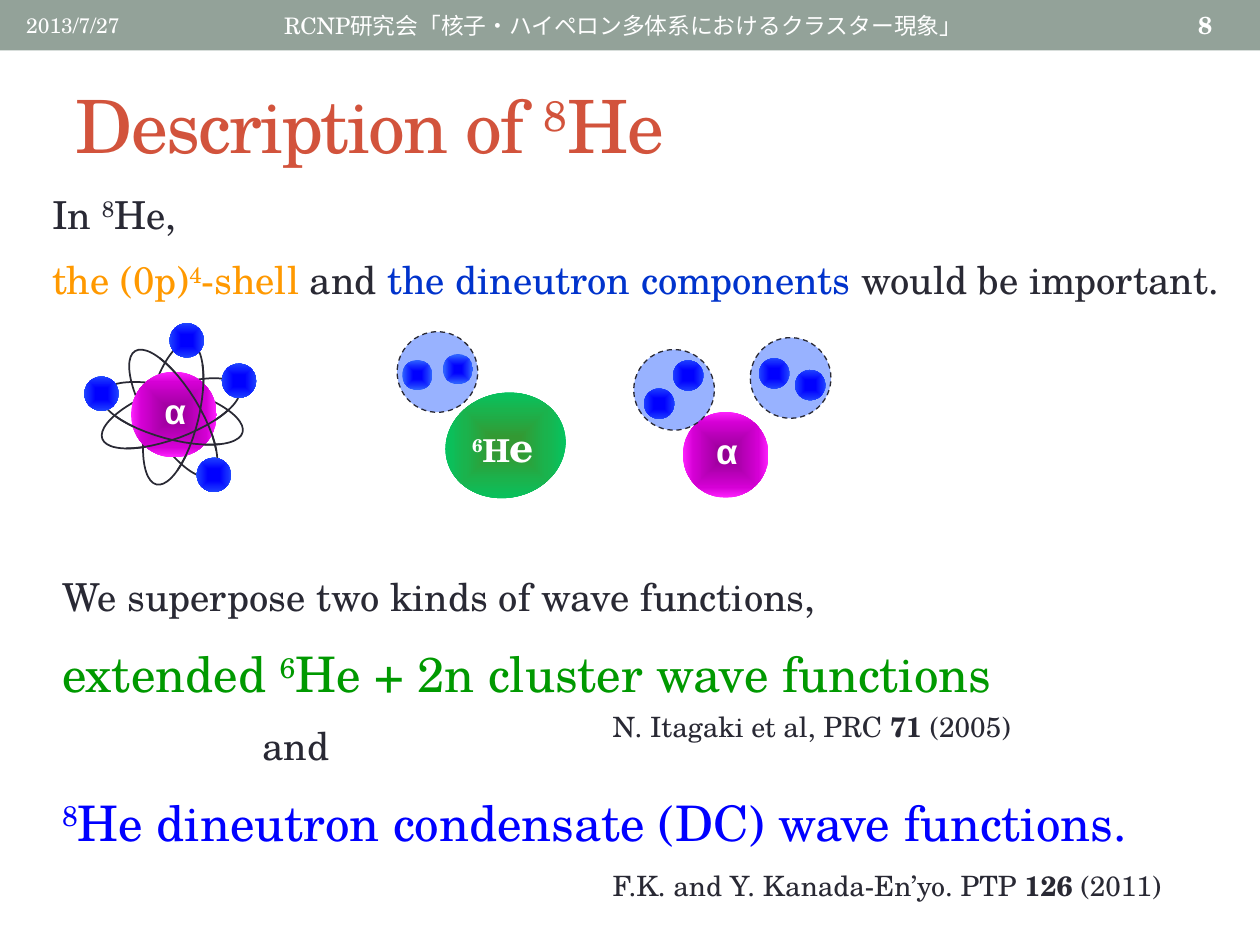
"""Build the slide on the description of helium-8."""
import math
from dataclasses import dataclass
from typing import NamedTuple, Optional

import pptx
import pptx.dml.color
import pptx.enum.dml
import pptx.enum.shapes
import pptx.enum.text
import pptx.oxml
import pptx.oxml.ns
import pptx.util
from lxml import etree

Pt = pptx.util.Pt
qn = pptx.oxml.ns.qn
INK, WHITE = "292934", "FFFFFF"
SERIF, SANS = "TeX Gyre Schola", "Arial"
NEUTRON_STOPS = ((25, "0000FF"), (59, "152DFF"), (91, "2D61FF"))
ALPHA_STOPS = ((0, "8F008F"), (76, "D500D5"), (100, "FF21FF"))
HELIUM6_STOPS = ((13, "339933"), (54, "1AB34D"), (92, "00C864"))
ORBIT_A, ORBIT_B = 14.75, 41.75
ARC_HALF_ANGLE, ARC_STEP = 48, 8


class Piece(NamedTuple):
    text: str
    color: Optional[str] = None
    raised: bool = False
    bold: bool = False
    size: Optional[float] = None


@dataclass
class Line:
    pieces: list[Piece]
    size: float = 22
    color: str = INK
    font: str = SERIF
    bold: bool = False
    indent: float = 0
    centered: bool = False
    spaced: bool = True
    tracking: float = 0


class Ball(NamedTuple):
    x: float
    y: float
    turn: float = 0


def rgb(code: str) -> pptx.dml.color.RGBColor:
    return pptx.dml.color.RGBColor.from_string(code)


def add_text(slide, left: float, top: float, width: float, height: float,
             lines: list[Line], middle: bool = False) -> None:
    frame = slide.shapes.add_textbox(Pt(left), Pt(top), Pt(width), Pt(height)).text_frame
    frame.word_wrap = True
    anchors = pptx.enum.text.MSO_ANCHOR
    frame.vertical_anchor = anchors.MIDDLE if middle else anchors.TOP
    for index, line in enumerate(lines):
        paragraph = frame.add_paragraph() if index else frame.paragraphs[0]
        paragraph.font.name = line.font
        paragraph.font.size = Pt(line.size)
        paragraph.font.bold = line.bold
        paragraph.font.color.rgb = rgb(line.color)
        if line.centered:
            paragraph.alignment = pptx.enum.text.PP_ALIGN.CENTER
        properties = paragraph._p.get_or_add_pPr()
        defaults = properties.find(qn("a:defRPr"))
        etree.SubElement(defaults, qn("a:ea")).set("typeface", line.font)
        if line.indent:
            properties.set("marL", str(int(Pt(line.indent))))
        if line.spaced:
            before = etree.Element(qn("a:spcBef"))
            etree.SubElement(before, qn("a:spcPct")).set("val", "50000")
            properties.insert(0, before)
        for piece in line.pieces:
            run = paragraph.add_run()
            run.text = piece.text
            if piece.color:
                run.font.color.rgb = rgb(piece.color)
            if piece.bold:
                run.font.bold = True
            if piece.size:
                run.font.size = Pt(piece.size)
            if piece.raised:
                run._r.get_or_add_rPr().set("baseline", "30000")
            if line.tracking:
                run._r.get_or_add_rPr().set("spc", str(int(line.tracking * 100)))


def add_ellipse(slide, ball: Ball, width: float, height: float):
    shape = slide.shapes.add_shape(
        pptx.enum.shapes.MSO_SHAPE.OVAL, Pt(ball.x - width / 2), Pt(ball.y - height / 2),
        Pt(width), Pt(height))
    shape.rotation = ball.turn
    shape.shadow.inherit = False
    shape.fill.background()
    shape.line.fill.background()
    return shape


def set_outline(shape, weight: float) -> None:
    shape.line.color.rgb = rgb(INK)
    shape.line.width = Pt(weight)


def add_glowing(slide, ball: Ball, width: float, height: float, stops) -> None:
    shape = add_ellipse(slide, ball, width, height)
    marks = "".join(f'<a:gs pos="{at * 1000}"><a:srgbClr val="{code}"/></a:gs>'
                    for at, code in stops)
    gradient = pptx.oxml.parse_xml(
        f'<a:gradFill {pptx.oxml.ns.nsdecls("a")} rotWithShape="1"><a:gsLst>{marks}</a:gsLst>'
        '<a:path path="shape"><a:fillToRect l="50000" t="50000" r="50000" b="50000"/>'
        '</a:path></a:gradFill>')
    properties = shape._element.spPr
    properties.replace(properties.find(qn("a:noFill")), gradient)


def add_neutrons(slide, balls: list[Ball], size: float) -> None:
    for ball in balls:
        add_glowing(slide, ball, size, size, NEUTRON_STOPS)


def add_alpha(slide, ball: Ball) -> None:
    add_glowing(slide, ball, 49, 49, ALPHA_STOPS)
    add_text(slide, ball.x - 12.6, ball.y - 18, 27.4, 31.7,
             [Line([Piece("α")], 20, WHITE, SANS, bold=True)])


def add_dineutron(slide, cloud: Ball, neutrons: list[Ball]) -> None:
    shape = add_ellipse(slide, cloud, 46.1, 46.1)
    shape.fill.solid()
    shape.fill.fore_color.rgb = rgb("3366FF")
    color = shape._element.spPr.find(qn("a:solidFill"))[0]
    etree.SubElement(color, qn("a:alpha")).set("val", "50000")
    set_outline(shape, 0.75)
    shape.line.dash_style = pptx.enum.dml.MSO_LINE.DASH
    add_neutrons(slide, neutrons, 17.3)


def add_front_arc(slide, orbit: Ball) -> None:
    edge = ORBIT_A * math.cos(math.radians(ARC_HALF_ANGLE))
    reach, turn = (ORBIT_A + edge) / 2, math.radians(orbit.turn)
    x = orbit.x + reach * math.cos(turn)
    y = orbit.y + reach * math.sin(turn)
    angles = [math.radians(a) for a in range(-ARC_HALF_ANGLE, ARC_HALF_ANGLE + 1, ARC_STEP)]
    points = [(Pt(x + ORBIT_A * math.cos(a) - reach), Pt(y + ORBIT_B * math.sin(a)))
              for a in angles]
    builder = slide.shapes.build_freeform(*points[0])
    builder.add_line_segments(points[1:], close=False)
    arc = builder.convert_to_shape()
    arc.rotation = orbit.turn
    arc.shadow.inherit = False
    arc.fill.background()
    set_outline(arc, 1)


def citation(authors: str, volume: str, year: str) -> list[Line]:
    return [Line([Piece(authors), Piece(volume, bold=True), Piece(year)], 16)]


def header(text: str, size: float, **style) -> list[Line]:
    return [Line([Piece(text)], size, WHITE, spaced=False, **style)]


def main() -> None:
    deck = pptx.Presentation()
    deck.slide_width, deck.slide_height = Pt(720), Pt(540)
    slide = deck.slides.add_slide(deck.slide_layouts[6])
    band = slide.shapes.add_shape(pptx.enum.shapes.MSO_SHAPE.RECTANGLE, 0, 0, Pt(720), Pt(28.8))
    band.shadow.inherit = False
    band.fill.solid()
    band.fill.fore_color.rgb = rgb("93A299")
    band.line.fill.background()

    add_text(slide, 36.2, 32, 648, 77.8, [Line(
        [Piece("Description of "), Piece("8", raised=True), Piece("He")],
        42, "D2533C", spaced=False, tracking=-1)], middle=True)
    add_text(slide, 7.9, 1.4, 94.3, 25.9, header("2013/7/27", 12), middle=True)
    add_text(slide, 144.7, 1.4, 422.6, 25.9, header(
        "RCNP研究会「核子・ハイペロン多体系におけるクラスター現象」", 13, centered=True), middle=True)
    add_text(slide, 677.5, 1.4, 32.4, 25.9, header("8", 14, bold=True), middle=True)
    add_text(slide, 22.7, 105.5, 694.8, 74.2, [
        Line([Piece("In "), Piece("8", raised=True), Piece("He,")]),
        Line([Piece("the (0p)", "FF9900"), Piece("4", "FF9900", raised=True),
              Piece("-shell", "FF9900"), Piece(" and "),
              Piece("the dineutron components ", "0033CC"), Piece("would be important.")])])
    add_text(slide, 28.4, 324, 670.3, 175.7, [
        Line([Piece("We superpose two kinds of wave functions,")]),
        Line([Piece("extended "), Piece("6", raised=True),
              Piece("He + 2n cluster wave functions")], 28, "009900"),
        Line([Piece("and")], indent=114.5),
        Line([Piece("8", raised=True),
              Piece("He dineutron condensate (DC) wave functions.")], 28, "0000FF")])
    add_text(slide, 343, 492.8, 329, 26.6,
             citation("F.K. and Y. Kanada-En’yo. PTP ", "126", " (2011)"))
    add_text(slide, 343, 401.8, 342.7, 26.6,
             citation("N. Itagaki et al, PRC ", "71", " (2005)"))

    orbits = [Ball(99, 236.2, 328.5), Ball(99, 236.2, 13.3),
              Ball(98.3, 236.2, 105.1), Ball(97.6, 236.2, 69.6)]
    for orbit in orbits:
        set_outline(add_ellipse(slide, orbit, 2 * ORBIT_A, 2 * ORBIT_B), 1)
    add_alpha(slide, Ball(99.4, 236.9))
    for orbit in orbits:
        add_front_arc(slide, orbit)
    add_neutrons(slide, [Ball(106.7, 194.5, 332.5), Ball(122.2, 271.4, 332.5),
                         Ball(58, 225, 332.5), Ball(136.6, 217.6, 332.5)], 19.6)

    add_glowing(slide, Ball(288.9, 254.5, 346.6), 69.1, 59.8, HELIUM6_STOPS)
    add_text(slide, 262.7, 236.6, 60.5, 36, [Line(
        [Piece("6", raised=True), Piece("H"), Piece("e", size=24)], 18, WHITE, bold=True)])
    add_dineutron(slide, Ball(250, 212.6, 3.7), [Ball(238.5, 214.4, 356.7), Ball(261.7, 211)])

    add_alpha(slide, Ball(414.7, 259.9))
    add_dineutron(slide, Ball(385.2, 222.8, 324.1),
                  [Ball(376.7, 230.7, 317.1), Ball(393.3, 214.6, 320.4)])
    add_dineutron(slide, Ball(451.8, 216, 30.8),
                  [Ball(442.4, 213.4, 23.8), Ball(463, 220.1, 27)])
    deck.save("out.pptx")


if __name__ == "__main__":
    main()
